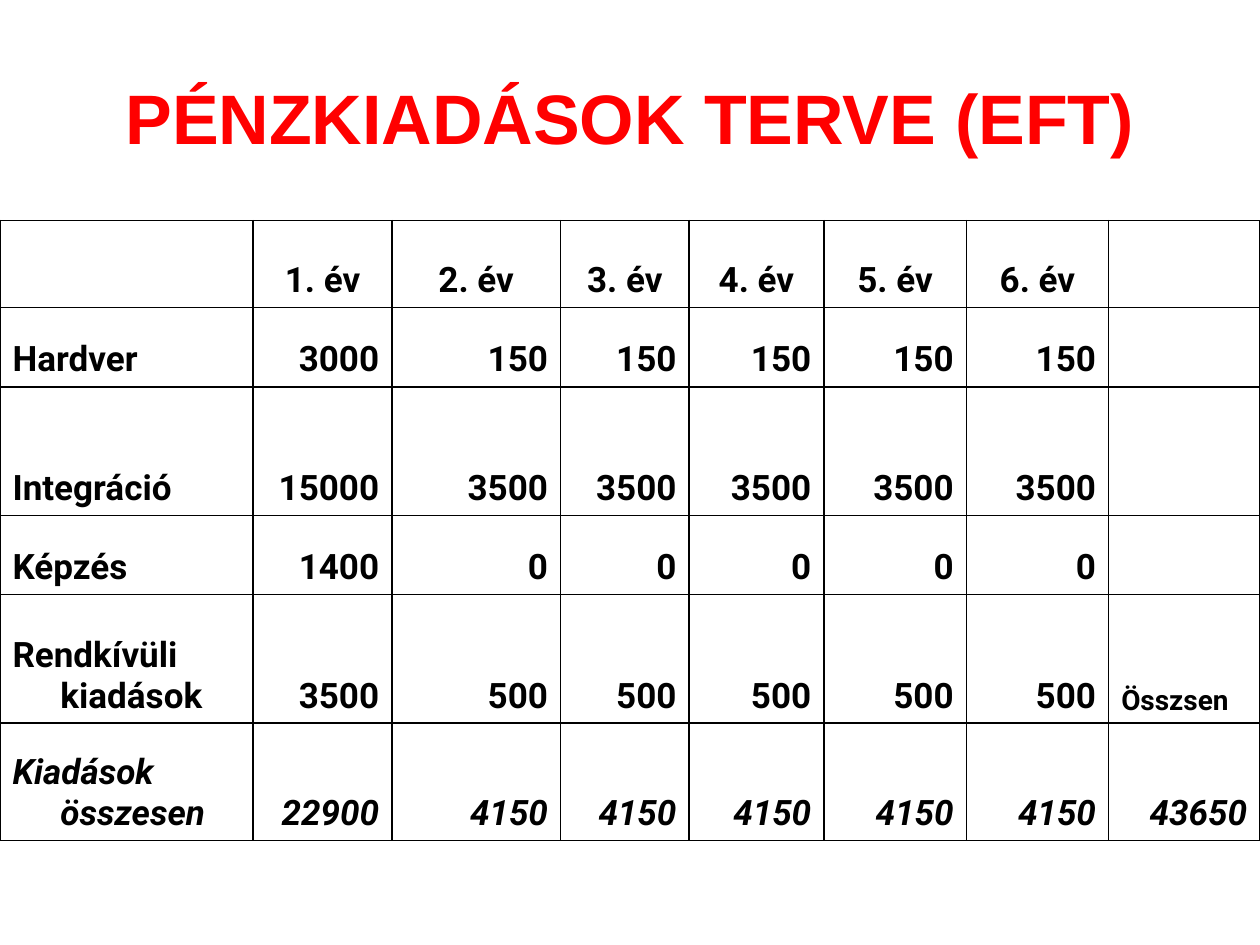
from dataclasses import dataclass

import lxml.etree
import pptx
import pptx.dml.color
import pptx.enum.text
import pptx.oxml.ns
import pptx.util

ALIGN = pptx.enum.text.PP_ALIGN
ANCHOR = pptx.enum.text.MSO_ANCHOR


@dataclass(frozen=True)
class Theme:
    title_font: str = "Arial"
    body_font: str = "Roboto"
    title_color: str = "FF0000"
    ink: str = "000000"
    title_size: int = 40
    body_size: int = 20
    note_size: int = 16
    border_width: int = 1
    hanging: float = 0.38


@dataclass(frozen=True)
class ExpenseRow:
    label: str
    values: tuple[str, ...]
    height: float
    total: str = ""
    italic: bool = False


THEME = Theme()
SLIDE_WIDTH, SLIDE_HEIGHT = pptx.util.Inches(10), pptx.util.Inches(7.5)
TABLE_TOP = 1.75
COLUMN_WIDTHS = (2.01, 1.1, 1.34, 1.02, 1.07, 1.13, 1.13, 1.2)
YEARS = 6
TOTAL_CAPTION = "Összsen"


def yearly(first: int, later: int) -> tuple[str, ...]:
    """Give the first year's amount, then the same amount for each later year."""
    return (str(first),) + (str(later),) * (YEARS - 1)


ROWS = (
    ExpenseRow("", tuple(f"{year}. év" for year in range(1, YEARS + 1)), 0.69),
    ExpenseRow("Hardver", yearly(3000, 150), 0.63),
    ExpenseRow("Integráció", yearly(15000, 3500), 1.02),
    ExpenseRow("Képzés", yearly(1400, 0), 0.63),
    ExpenseRow("Rendkívüli kiadások", yearly(3500, 500), 1.02, total=TOTAL_CAPTION),
    ExpenseRow("Kiadások összesen", yearly(22900, 4150), 0.93, total="43650", italic=True),
)


def style_paragraph(paragraph, font_name: str, size: int, color: str, alignment) -> None:
    paragraph.alignment = alignment
    paragraph.font.name = font_name
    paragraph.font.size = pptx.util.Pt(size)
    paragraph.font.bold = True
    paragraph.font.color.rgb = pptx.dml.color.RGBColor.from_string(color)


def add_title(slide, text: str) -> None:
    box = slide.shapes.add_textbox(
        int(SLIDE_WIDTH * 0.05), int(SLIDE_HEIGHT * 0.04),
        int(SLIDE_WIDTH * 0.9), int(SLIDE_HEIGHT / 6),
    )
    frame = box.text_frame
    frame.word_wrap = True
    frame.vertical_anchor = ANCHOR.MIDDLE
    frame.text = text
    style_paragraph(frame.paragraphs[0], THEME.title_font, THEME.title_size,
                    THEME.title_color, ALIGN.CENTER)


def add_borders(cell) -> None:
    """Rule all four sides; borders must precede the fill in the cell properties."""
    qn = pptx.oxml.ns.qn
    properties = cell._tc.get_or_add_tcPr()
    for position, side in enumerate(("lnL", "lnR", "lnT", "lnB")):
        line = lxml.etree.Element(qn(f"a:{side}"), w=str(pptx.util.Pt(THEME.border_width)))
        fill = lxml.etree.SubElement(line, qn("a:solidFill"))
        lxml.etree.SubElement(fill, qn("a:srgbClr"), val=THEME.ink)
        properties.insert(position, line)


def fill_cell(cell, text: str, alignment, size: int, italic: bool) -> None:
    cell.fill.background()
    add_borders(cell)
    cell.vertical_anchor = ANCHOR.BOTTOM
    cell.text = text
    paragraph = cell.text_frame.paragraphs[0]
    style_paragraph(paragraph, THEME.body_font, size, THEME.ink, alignment)
    paragraph.font.italic = italic
    hanging = pptx.util.Inches(THEME.hanging)
    properties = paragraph._p.get_or_add_pPr()
    properties.set("marL", str(hanging))
    properties.set("indent", str(-hanging))


def add_expense_table(slide) -> None:
    table = slide.shapes.add_table(
        len(ROWS), len(COLUMN_WIDTHS), 0, pptx.util.Inches(TABLE_TOP),
        SLIDE_WIDTH, pptx.util.Inches(sum(row.height for row in ROWS)),
    ).table
    table.first_row = table.horz_banding = False
    for column, width in zip(table.columns, COLUMN_WIDTHS):
        column.width = pptx.util.Inches(width)
    for row_index, row in enumerate(ROWS):
        table.rows[row_index].height = pptx.util.Inches(row.height)
        for column_index, text in enumerate((row.label, *row.values, row.total)):
            is_caption = text == TOTAL_CAPTION
            if column_index == 0 or is_caption:
                alignment = ALIGN.LEFT
            else:
                alignment = ALIGN.CENTER if row_index == 0 else ALIGN.RIGHT
            size = THEME.note_size if is_caption else THEME.body_size
            fill_cell(table.cell(row_index, column_index), text, alignment, size, row.italic)


def main() -> None:
    presentation = pptx.Presentation()
    presentation.slide_width, presentation.slide_height = SLIDE_WIDTH, SLIDE_HEIGHT
    slide = presentation.slides.add_slide(presentation.slide_layouts[6])
    add_title(slide, "PÉNZKIADÁSOK TERVE (EFT)")
    add_expense_table(slide)
    presentation.save("out.pptx")


if __name__ == "__main__":
    main()
